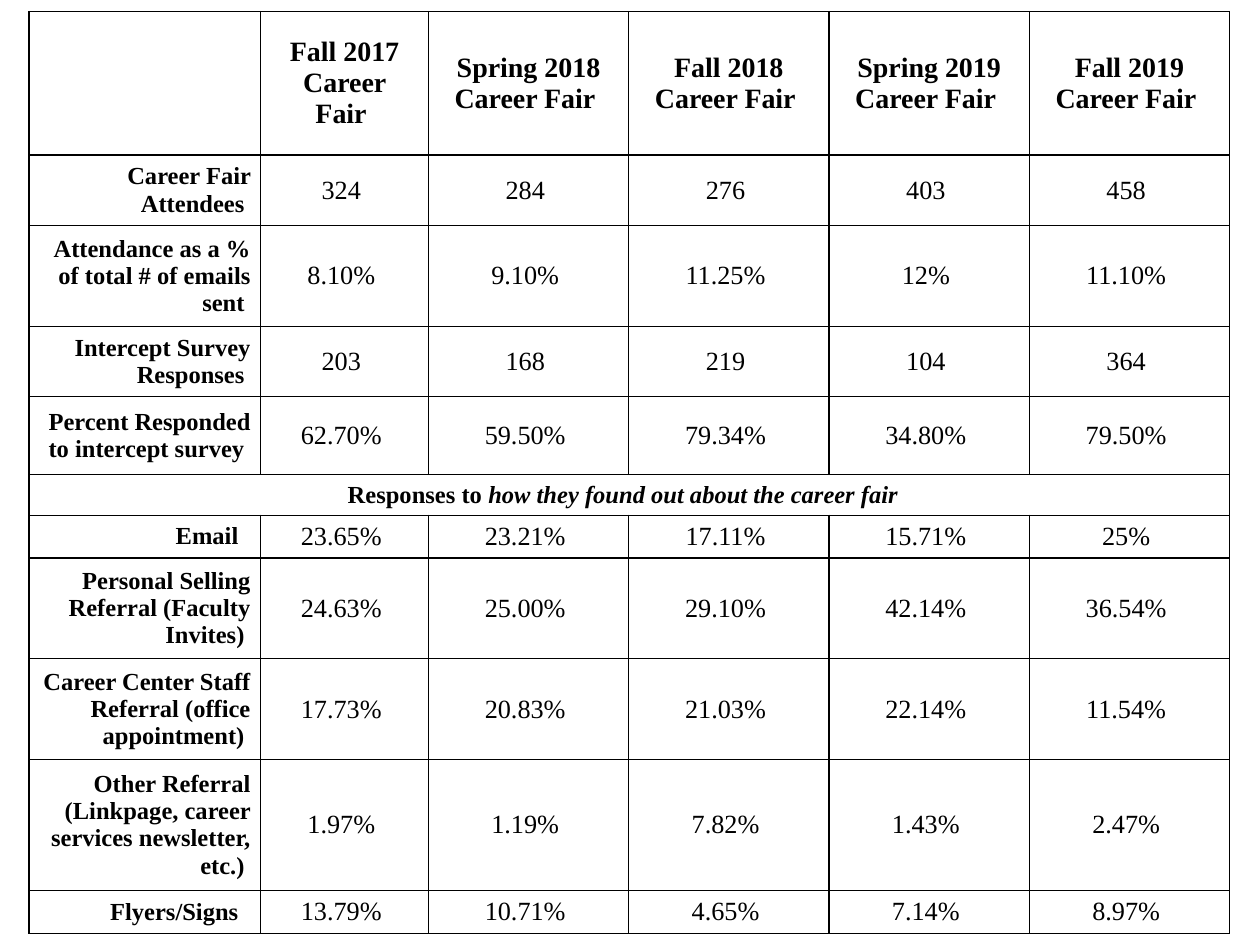
from dataclasses import dataclass
from typing import Any

from lxml.etree import SubElement
from pptx import Presentation
from pptx.dml.color import RGBColor
from pptx.enum.text import MSO_ANCHOR, PP_ALIGN
from pptx.oxml.ns import qn
from pptx.table import Table, _Cell
from pptx.util import Inches, Pt


@dataclass(frozen=True)
class Theme:
    """Colours, font and type sizes."""
    ink: str = "000000"
    face: str = "Times New Roman"
    head: int = 16
    label: int = 14
    value: int = 15
    rule: float = 0.75


@dataclass(frozen=True)
class Row:
    """One line of the fair table."""
    high: float
    label: str
    values: str
    pads: int = 1


THEME = Theme()
PAD = chr(160)
WIDTHS = [1.84, 1.33] + [1.59] * 4
HEAD = 1.14
TERMS = ["Fall 2017", "Spring 2018", "Fall 2018", "Spring 2019", "Fall 2019"]
BAND = 5
ROWS = [
    Row(0.56, "Career Fair Attendees", "324 284 276 403 458"),
    Row(0.8, "Attendance as a % of total # of emails sent", "8.10% 9.10% 11.25% 12% 11.10%"),
    Row(0.56, "Intercept Survey Responses", "203 168 219 104 364"),
    Row(0.62, "Percent Responded to intercept survey", "62.70% 59.50% 79.34% 34.80% 79.50%"),
    Row(0.32, "Responses to", ""),
    Row(0.34, "Email", "23.65% 23.21% 17.11% 15.71% 25%", 2),
    Row(0.8, "Personal Selling Referral (Faculty Invites)", "24.63% 25.00% 29.10% 42.14% 36.54%"),
    Row(0.8, "Career Center Staff Referral (office appointment)",
        "17.73% 20.83% 21.03% 22.14% 11.54%"),
    Row(1.04, "Other Referral (Linkpage, career services newsletter, etc.)",
        "1.97% 1.19% 7.82% 1.43% 2.47%"),
    Row(0.34, "Flyers/Signs", "13.79% 10.71% 4.65% 7.14% 8.97%", 2),
]
CELL = {
    "margin_left": Inches(0.08),
    "margin_right": Inches(0.08),
    "margin_top": Inches(0.04),
    "margin_bottom": Inches(0.04),
    "vertical_anchor": MSO_ANCHOR.MIDDLE,
}
PLAIN = {"first_row": False, "horz_banding": False}


def apply(item: Any, form: dict[str, Any]) -> None:
    """Set each format value on an item."""
    for name, value in form.items():
        setattr(item, name, value)


def frame(cell: _Cell) -> None:
    """Give a cell its margins, rules and clear fill."""
    apply(cell, CELL)
    props = cell._tc.get_or_add_tcPr()
    for side in ("lnL", "lnR", "lnT", "lnB"):
        line = SubElement(props, qn(f"a:{side}"), w=str(Pt(THEME.rule)))
        fill = SubElement(line, qn("a:solidFill"))
        SubElement(fill, qn("a:srgbClr"), val=THEME.ink)
    cell.fill.background()


def write(cell: _Cell, text: str, size: int, bold: bool = True,
          align: PP_ALIGN = PP_ALIGN.CENTER, slant: bool = False) -> None:
    """Add a run of text to a cell."""
    para = cell.text_frame.paragraphs[0]
    para.alignment = align
    run = para.add_run()
    run.text = text
    apply(run.font, {"name": THEME.face, "size": Pt(size), "bold": bold, "italic": slant})
    run.font.color.rgb = RGBColor.from_string(THEME.ink)


def fill_row(table: Table, index: int, row: Row) -> None:
    """Write the label and values of a row."""
    write(table.cell(index, 0), row.label + PAD * row.pads, THEME.label, align=PP_ALIGN.RIGHT)
    for col, value in enumerate(row.values.split(), 1):
        write(table.cell(index, col), value + PAD, THEME.value, bold=False)


def fill_band(table: Table, index: int, row: Row) -> None:
    """Write the heading that spans the table."""
    cell = table.cell(index, 0)
    cell.merge(table.cell(index, len(WIDTHS) - 1))
    write(cell, row.label + PAD, THEME.label)
    write(cell, "how they found out about the career fair" + PAD * 2, THEME.label, slant=True)


def main() -> None:
    """Build and save the slide."""
    deck = Presentation()
    apply(deck, {"slide_width": Inches(10), "slide_height": Inches(7.5)})
    slide = deck.slides.add_slide(deck.slide_layouts[6])
    highs = [HEAD] + [row.high for row in ROWS]
    table = slide.shapes.add_table(
        len(highs), len(WIDTHS), Inches(0.23), Inches(0.09),
        Inches(sum(WIDTHS)), Inches(sum(highs))).table
    apply(table, PLAIN)
    for col, wide in zip(table.columns, WIDTHS):
        col.width = Inches(wide)
    for line, high in zip(table.rows, highs):
        line.height = Inches(high)
    for cell in table.iter_cells():
        frame(cell)
    for col, term in enumerate(TERMS, 1):
        write(table.cell(0, col), f"{term} Career Fair{PAD}", THEME.head)
    for index, row in enumerate(ROWS, 1):
        draw = fill_band if index == BAND else fill_row
        draw(table, index, row)
    deck.save("out.pptx")


if __name__ == "__main__":
    main()
